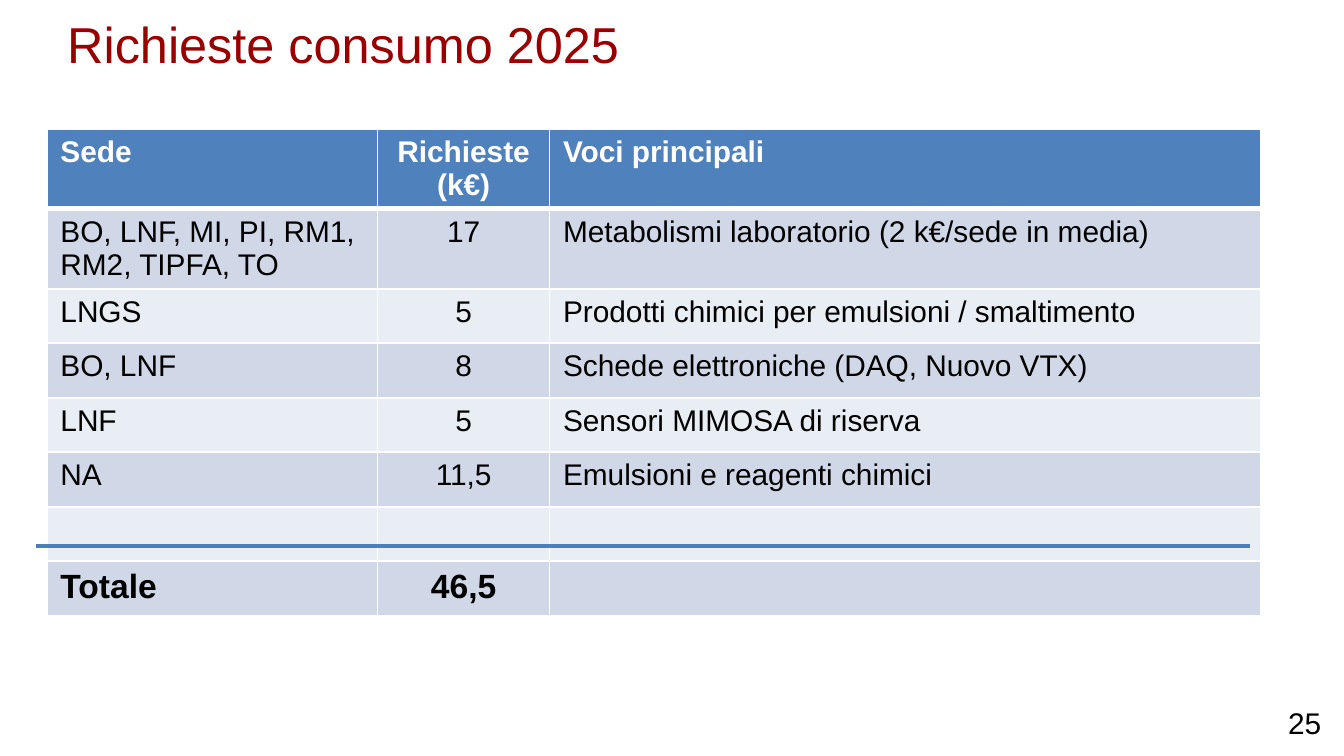
import pptx
import pptx.util
import pptx.dml.color
import pptx.enum.shapes
import pptx.enum.text
import pptx.oxml
import pptx.oxml.ns

WIDE = pptx.util.Inches(10)
HIGH = WIDE * 9 // 16
ALIGN = pptx.enum.text.PP_ALIGN
HUES = {
    "title": "990000", "head": "4F81BD", "odd": "D0D8E8", "even": "E9EDF4",
    "rule": "4B7EBC", "white": "FFFFFF", "black": "000000",
}
COLS = [2.46, 1.28, 5.29]
SIDES = [ALIGN.LEFT, ALIGN.CENTER, ALIGN.LEFT]
ROWS = [
    ["Sede", "Richieste (k€)", "Voci principali"],
    ["BO, LNF, MI, PI, RM1, RM2, TIPFA, TO", "17", "Metabolismi laboratorio (2 k€/sede in media)"],
    ["LNGS", "5", "Prodotti chimici per emulsioni / smaltimento"],
    ["BO, LNF", "8", "Schede elettroniche (DAQ, Nuovo VTX)"],
    ["LNF", "5", "Sensori MIMOSA di riserva"],
    ["NA", "11,5", "Emulsioni e reagenti chimici"],
    ["", "", ""],
    ["Totale", "46,5", ""],
]


def hue(name):
    return pptx.dml.color.RGBColor.from_string(HUES[name])


def across(part):
    return int(WIDE * part / 100)


def down(part):
    return int(HIGH * part / 100)


def apply(thing, form):
    for key, value in form.items():
        setattr(thing, key, value)


def write(frame, text, size, tint, side, bold=False):
    frame.text = text
    para = frame.paragraphs[0]
    para.alignment = side
    apply(para.font, {"size": pptx.util.Pt(size), "name": "Arial", "bold": bold})
    para.font.color.rgb = hue(tint)
    return para


def place(shape, left, top, width, height):
    apply(shape, {"left": across(left), "top": down(top),
                  "width": across(width), "height": down(height)})
    inset = pptx.util.Inches(0.09)
    apply(shape.text_frame, {
        "word_wrap": True,
        "auto_size": pptx.enum.text.MSO_AUTO_SIZE.NONE,
        "vertical_anchor": pptx.enum.text.MSO_ANCHOR.MIDDLE,
        "margin_left": inset, "margin_right": inset,
    })


def edge(cell, tag, points):
    space = pptx.oxml.ns.nsdecls("a")
    cell._tc.get_or_add_tcPr().append(pptx.oxml.parse_xml(
        f'<a:{tag} {space} w="{pptx.util.Pt(points)}"><a:solidFill>'
        f'<a:srgbClr val="{HUES["white"]}"/></a:solidFill></a:{tag}>'))


def paint(cell, text, row, side):
    last = row == len(ROWS) - 1
    widths = {"lnL": 1, "lnR": 1, "lnT": 3 if row == 1 else 1, "lnB": 3 if row == 0 else 1}
    for tag, points in widths.items():
        edge(cell, tag, points)
    cell.fill.solid()
    cell.fill.fore_color.rgb = hue("head" if row == 0 else "odd" if row % 2 else "even")
    write(cell.text_frame, text, 18 if last else 16,
          "black" if row else "white", side, row == 0 or last)


def add_grid(slide):
    tall = pptx.util.Cm(1.03)
    table = slide.shapes.add_table(
        len(ROWS), len(COLS), across(3.5), down(17.07),
        pptx.util.Inches(sum(COLS)), tall * len(ROWS)).table
    for col, width in zip(table.columns, COLS):
        col.width = pptx.util.Inches(width)
    for row, texts in enumerate(ROWS):
        table.rows[row].height = tall
        for col, text in enumerate(texts):
            paint(table.cell(row, col), text, row, SIDES[col])


def add_title(slide):
    title = slide.shapes.title
    place(title, 4.1, 1.24, 94.6, 9.96)
    para = write(title.text_frame, "Richieste consumo 2025", 27, "title", ALIGN.LEFT)
    para.line_spacing = 0.9


def add_page(slide):
    box = slide.shapes.add_textbox(0, 0, 0, 0)
    place(box, 76.7, 92.98, 22.5, 5.33)
    write(box.text_frame, "25", 16, "black", ALIGN.RIGHT)


def add_rule(slide):
    line = slide.shapes.add_connector(
        pptx.enum.shapes.MSO_CONNECTOR.STRAIGHT,
        across(2.7), down(72.18), across(93), down(72.18))
    line.line.width = pptx.util.Pt(2.25)
    line.line.color.rgb = hue("rule")
    line._element.spPr.append(pptx.oxml.parse_xml(
        f'<a:effectLst {pptx.oxml.ns.nsdecls("a")}/>'))


def main():
    deck = pptx.Presentation()
    apply(deck, {"slide_width": WIDE, "slide_height": HIGH})
    slide = deck.slides.add_slide(deck.slide_layouts[5])
    add_page(slide)
    add_grid(slide)
    add_title(slide)
    add_rule(slide)
    deck.save("out.pptx")


if __name__ == "__main__":
    main()
